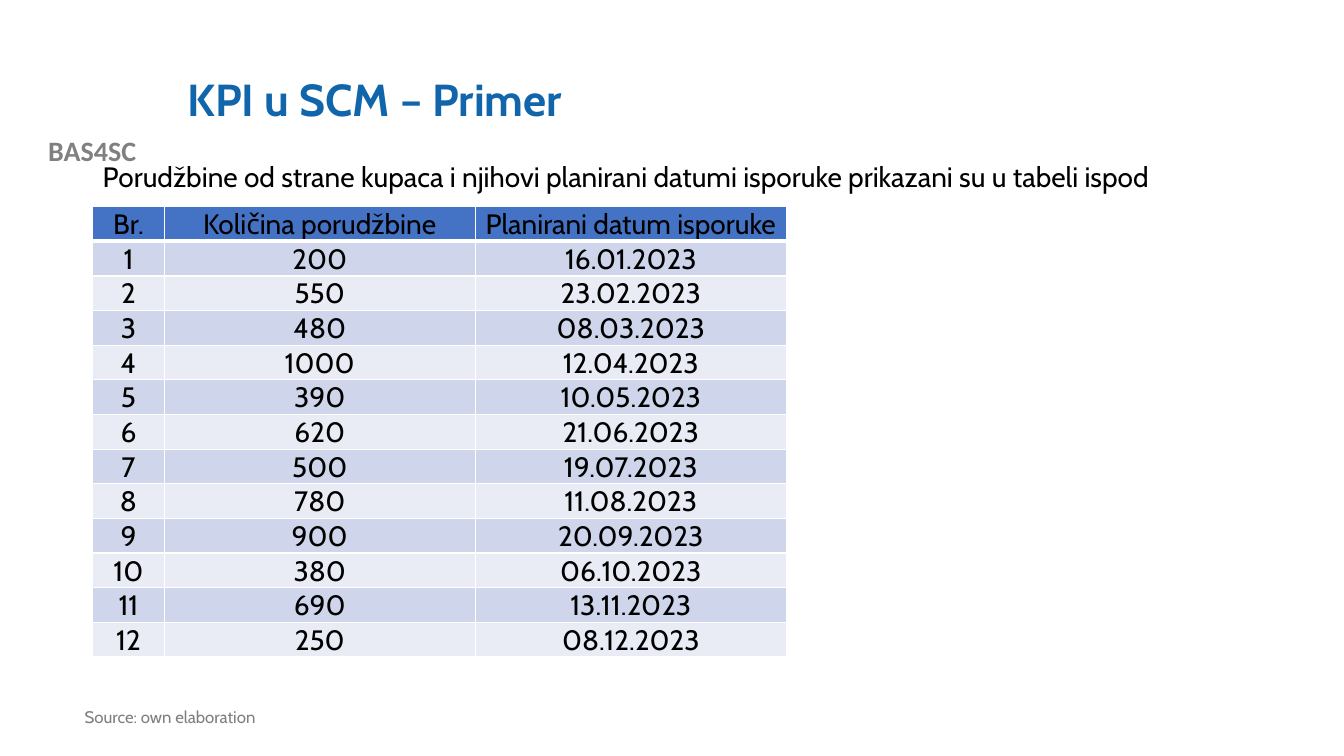
from lxml import etree
from pptx import Presentation
from pptx import util as u
from pptx.dml import color
from pptx.enum import text
from pptx.oxml import ns

WIDTH, HEIGHT = 13.33, 7.5
COLUMN_SHARES = (0.71, 3.09, 3.09)
HEADINGS = ("Br.", "Količina porudžbine", "Planirani datum isporuke")
ORDERS = (
    (200, "16.01.2023"), (550, "23.02.2023"), (480, "08.03.2023"),
    (1000, "12.04.2023"), (390, "10.05.2023"), (620, "21.06.2023"),
    (500, "19.07.2023"), (780, "11.08.2023"), (900, "20.09.2023"),
    (380, "06.10.2023"), (690, "13.11.2023"), (250, "08.12.2023"),
)


def rgb(value):
    return color.RGBColor.from_string(value)


def style(para, size, ink, face="Cabin", bold=False, align=text.PP_ALIGN.LEFT):
    para.alignment = align
    para.font.size = u.Pt(size)
    para.font.name = face
    para.font.bold = bold
    para.font.color.rgb = rgb(ink)


def add_text(page, box, words, size, ink, spacing=0.9,
             anchor=text.MSO_ANCHOR.TOP, **looks):
    frame = page.shapes.add_textbox(*map(u.Inches, box)).text_frame
    frame.word_wrap = True
    frame.vertical_anchor = anchor
    para = frame.paragraphs[0]
    para.text = words
    para.line_spacing = spacing
    style(para, size, ink, **looks)


def add_borders(cell, bottom):
    properties = cell._tc.get_or_add_tcPr()
    for side, points in (("L", 1), ("R", 1), ("T", 1), ("B", bottom)):
        line = etree.SubElement(properties, ns.qn(f"a:ln{side}"), w=str(u.Pt(points)))
        fill = etree.SubElement(line, ns.qn("a:solidFill"))
        etree.SubElement(fill, ns.qn("a:srgbClr"), val="FFFFFF")


def fill_cell(cell, words, background, bottom):
    add_borders(cell, bottom)
    cell.fill.solid()
    cell.fill.fore_color.rgb = rgb(background)
    cell.vertical_anchor = text.MSO_ANCHOR.MIDDLE
    cell.margin_left = cell.margin_right = cell.margin_top = u.Inches(0.01)
    cell.margin_bottom = 0
    para = cell.text_frame.paragraphs[0]
    para.text = str(words)
    style(para, 20, "000000", align=text.PP_ALIGN.CENTER)


def add_orders(page, box):
    rows = [HEADINGS] + [(number, *order) for number, order in enumerate(ORDERS, 1)]
    table = page.shapes.add_table(
        len(rows), len(HEADINGS), *map(u.Inches, box)).table
    for column, share in zip(table.columns, COLUMN_SHARES):
        column.width = u.Inches(box[2] * share / sum(COLUMN_SHARES))
    for index, values in enumerate(rows):
        table.rows[index].height = u.Inches(box[3] / len(rows))
        band = "CFD5EA" if index % 2 else "E9EBF5"
        background, bottom = (band, 1) if index else ("4472C4", 3)
        for cell, words in zip(table.rows[index].cells, values):
            fill_cell(cell, words, background, bottom)


def add_heading(page, box):
    left, top, width, height = box
    add_text(page, (left, top + 0.88, 1.83, 0.44), "BAS4SC", 20, "808080",
             spacing=1.0, face="Calibri", bold=True, align=text.PP_ALIGN.CENTER)
    add_text(page, (left + 1.76, top, width - 2.67, height), "KPI u SCM – Primer",
             32, "1065AB", anchor=text.MSO_ANCHOR.MIDDLE, bold=True)


def add_body(page, box):
    left, top, width, height = box
    add_text(page, (left, top, width, 1.14),
             "Porudžbine od strane kupaca i njihovi planirani datumi isporuke "
             "prikazani su u tabeli ispod",
             20, "000000", align=text.PP_ALIGN.JUSTIFY)
    add_orders(page, (left, top + 0.48, 6.88, height - 0.48))


def main():
    deck = Presentation()
    deck.slide_width, deck.slide_height = u.Inches(WIDTH), u.Inches(HEIGHT)
    page = deck.slides.add_slide(deck.slide_layouts[6])
    add_heading(page, (0, 0.4, WIDTH, 1.22))
    add_body(page, (0.92, 1.57, 11.98, 4.92))
    add_text(page, (0.74, 6.98, 5.01, 0.52), "Source: own elaboration", 12, "7F7F7F")
    deck.save("out.pptx")


if __name__ == "__main__":
    main()
